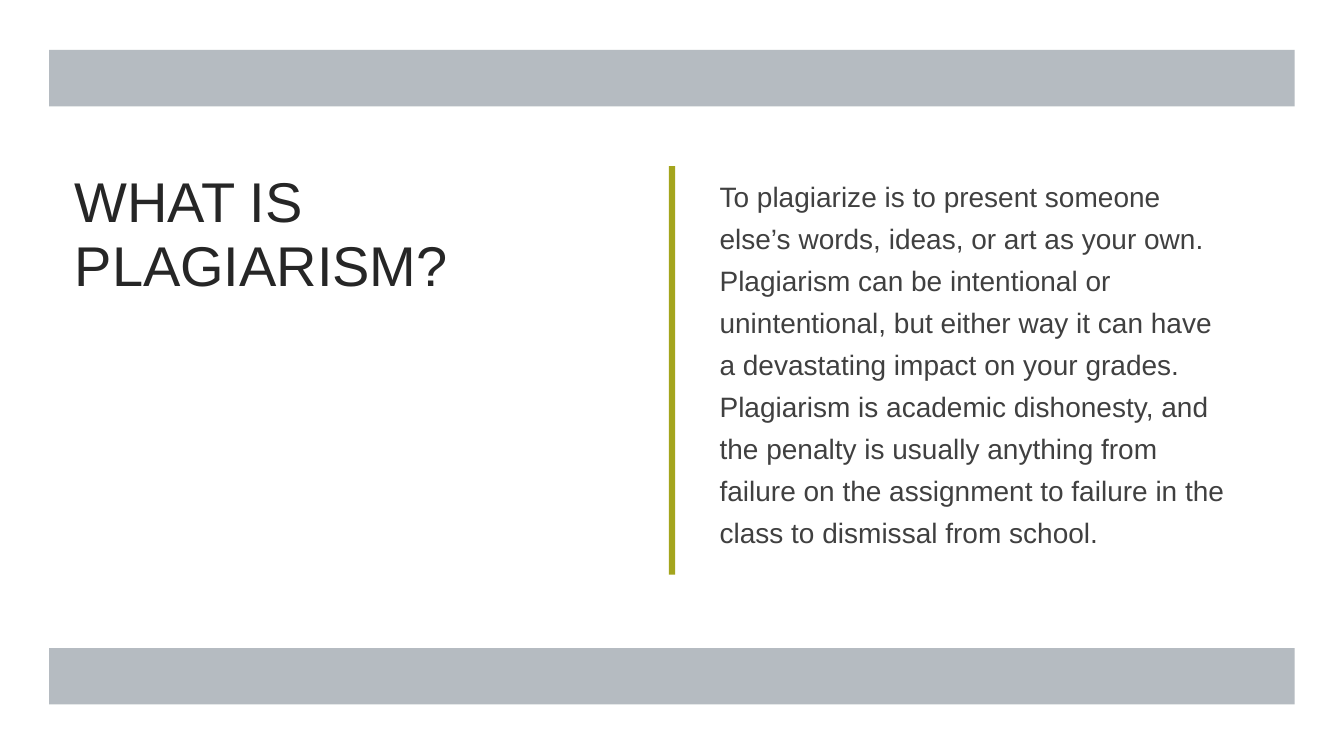
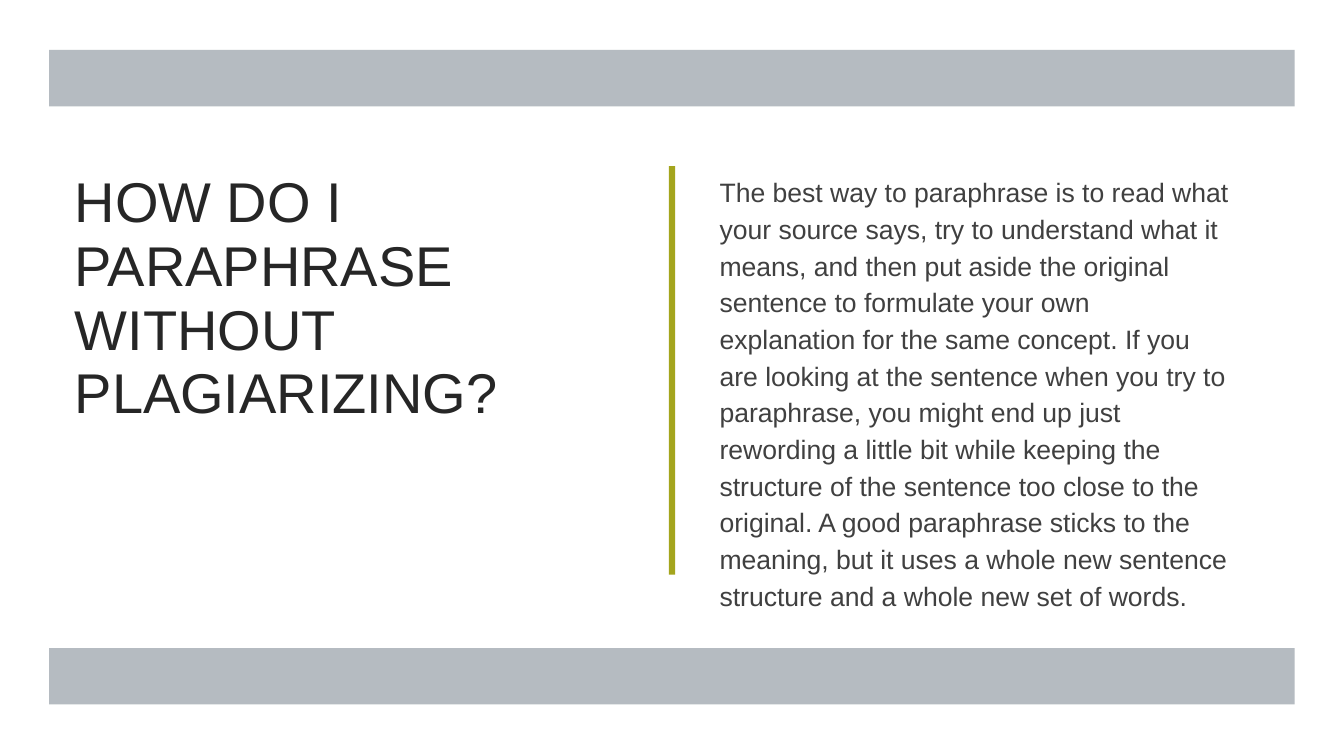
from lxml.etree import SubElement
from pptx import Presentation
from pptx.dml.color import RGBColor
from pptx.enum.shapes import MSO_SHAPE
from pptx.enum.text import MSO_ANCHOR, MSO_AUTO_SIZE, PP_ALIGN
from pptx.oxml.ns import qn
from pptx.util import Cm, Pt

# Content
SLIDES = [
    {
        "title": "WHAT IS PLAGIARISM?",
        "body": "To plagiarize is to present someone else’s words, ideas, or art as "
                "your own. Plagiarism can be intentional or unintentional, but either "
                "way it can have a devastating impact on your grades. Plagiarism is "
                "academic dishonesty, and the penalty is usually anything from failure "
                "on the assignment to failure in the class to dismissal from school.",
        "size": 20,
        "spacing": 1.25,
    },
    {
        "title": "HOW DO I PARAPHRASE WITHOUT PLAGIARIZING?",
        "body": "The best way to paraphrase is to read what your source says, try to "
                "understand what it means, and then put aside the original sentence to "
                "formulate your own explanation for the same concept. If you are looking "
                "at the sentence when you try to paraphrase, you might end up just "
                "rewording a little bit while keeping the structure of the sentence too "
                "close to the original. A good paraphrase sticks to the meaning, but it "
                "uses a whole new sentence structure and a whole new set of words.",
        "size": 19,
        "spacing": 1.15,
    },
]

# Shared style
FONT = "Arial"
TITLE_COLOR = RGBColor(0x26, 0x26, 0x26)
BODY_COLOR = RGBColor(0x40, 0x40, 0x40)
BAND_COLOR = RGBColor(0x96, 0x9F, 0xA7)
DIVIDER_COLOR = RGBColor(0xA4, 0xA5, 0x1D)
BAND_OPACITY = 70

# Shared layout
SLIDE_WIDTH, SLIDE_HEIGHT = Cm(33.87), Cm(19.05)
BAND_LEFT, BAND_HEIGHT = Cm(1.24), Cm(1.42)
BAND_TOPS = (Cm(1.26), Cm(16.33))
TEXT_TOP, TEXT_HEIGHT = Cm(4.19), Cm(10.85)
TITLE_LEFT, TITLE_WIDTH = Cm(1.63), Cm(14.22)
BODY_LEFT, BODY_WIDTH = Cm(17.88), Cm(13.39)
DIVIDER_WIDTH, DIVIDER_HEIGHT = Cm(0.16), Cm(10.29)


def write_text(box, text, *, left, width, size, color, spacing, after=0):
    """Place a placeholder in the text row and fill it with one plain paragraph."""
    box.left, box.top, box.width, box.height = left, TEXT_TOP, width, TEXT_HEIGHT
    frame = box.text_frame
    frame.word_wrap = True
    frame.auto_size = MSO_AUTO_SIZE.NONE
    frame.vertical_anchor = MSO_ANCHOR.TOP
    para = frame.paragraphs[0]
    para.alignment = PP_ALIGN.LEFT
    para.line_spacing = spacing
    para.space_after = Pt(after)
    properties = para._p.get_or_add_pPr()
    properties.set("marL", "0")
    properties.set("indent", "0")
    SubElement(properties, qn("a:buNone"))
    span = para.add_run()
    span.text = text
    span.font.name = FONT
    span.font.size = Pt(size)
    span.font.color.rgb = color


def add_bar(page, left, top, width, height, color, opacity=100):
    """Add a borderless rectangle."""
    bar = page.shapes.add_shape(MSO_SHAPE.RECTANGLE, left, top, width, height)
    bar.shadow.inherit = False
    bar.fill.solid()
    bar.fill.fore_color.rgb = color
    bar.line.fill.background()
    if opacity < 100:
        tint = bar._element.spPr.find(qn("a:solidFill"))[0]
        SubElement(tint, qn("a:alpha"), val=str(opacity * 1000))


def add_page(deck, content):
    page = deck.slides.add_slide(deck.slide_layouts[1])
    title, body = page.placeholders
    write_text(title, content["title"], left=TITLE_LEFT, width=TITLE_WIDTH,
               size=40, color=TITLE_COLOR, spacing=0.95)
    write_text(body, content["body"], left=BODY_LEFT, width=BODY_WIDTH,
               size=content["size"], color=BODY_COLOR,
               spacing=content["spacing"], after=6)
    # Bands above and below, divider in the middle
    for top in BAND_TOPS:
        add_bar(page, BAND_LEFT, top, SLIDE_WIDTH - 2 * BAND_LEFT, BAND_HEIGHT,
                BAND_COLOR, BAND_OPACITY)
    add_bar(page, (SLIDE_WIDTH - DIVIDER_WIDTH) // 2, TEXT_TOP,
            DIVIDER_WIDTH, DIVIDER_HEIGHT, DIVIDER_COLOR)


def main():
    deck = Presentation()
    deck.slide_width, deck.slide_height = SLIDE_WIDTH, SLIDE_HEIGHT
    for content in SLIDES:
        add_page(deck, content)
    deck.save("out.pptx")


if __name__ == "__main__":
    main()
